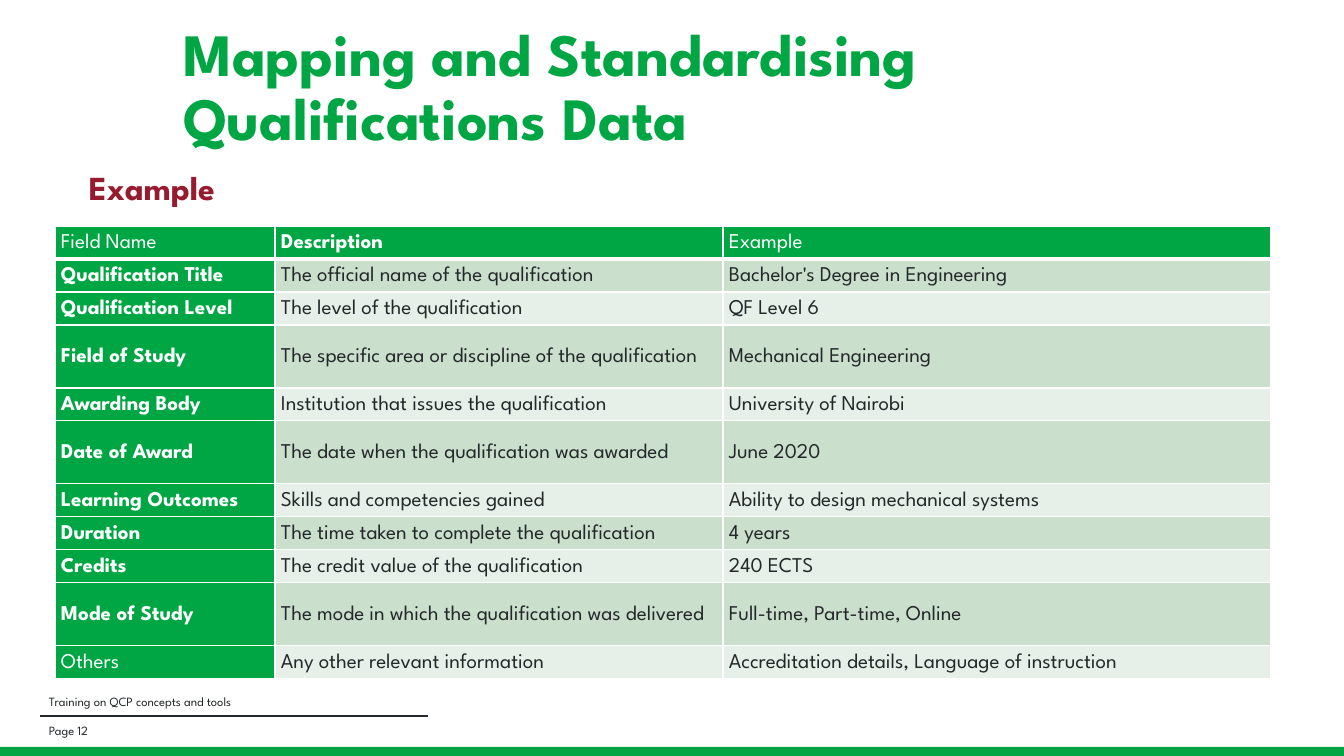
from lxml import etree
from pptx import Presentation
from pptx import util as u
from pptx.dml.color import RGBColor
from pptx.enum import shapes, text
from pptx.oxml.ns import qn

GREEN = RGBColor(0x00, 0xA6, 0x43)
DARK = RGBColor(0x24, 0x28, 0x2A)
RED = RGBColor(0x97, 0x1B, 0x2F)
WHITE = RGBColor(0xFF, 0xFF, 0xFF)
BANDS = [RGBColor(0xE6, 0xF0, 0xE8), RGBColor(0xCA, 0xE0, 0xCD)]

COLS = [220, 448, 548]
LOW, TALL = 33, 63
TALL_ROWS = {"Field of Study", "Date of Award", "Mode of Study"}
PLAIN = {"Field Name", "Example", "Others"}
ROWS = [
    ("Field Name", "Description", "Example"),
    ("Qualification Title", "The official name of the qualification",
     "Bachelor's Degree in Engineering"),
    ("Qualification Level", "The level of the qualification", "QF Level 6"),
    ("Field of Study", "The specific area or discipline of the qualification",
     "Mechanical Engineering"),
    ("Awarding Body", "Institution that issues the qualification",
     "University of Nairobi"),
    ("Date of Award", "The date when the qualification was awarded",
     "June 2020"),
    ("Learning Outcomes", "Skills and competencies gained",
     "Ability to design mechanical systems"),
    ("Duration", "The time taken to complete the qualification", "4 years"),
    ("Credits", "The credit value of the qualification", "240 ECTS"),
    ("Mode of Study", "The mode in which the qualification was delivered",
     "Full-time, Part-time, Online"),
    ("Others", "Any other relevant information",
     "Accreditation details, Language of instruction"),
]


def px(n):
    return u.Emu(round(n * 914400 / 100.8))


class Deck:
    """Holds the style and the current slide, and draws each kind of element."""

    font = "League Spartan"

    def __init__(self):
        self.prs = Presentation()
        self.prs.slide_width, self.prs.slide_height = px(1344), px(756)
        self.slide = self.prs.slides.add_slide(self.prs.slide_layouts[5])

    def style(self, par, size, color, bold=False, lead=1.0):
        par.alignment = text.PP_ALIGN.LEFT
        par.line_spacing = lead
        font = par.font
        font.name, font.size, font.bold = self.font, u.Pt(size), bold
        font.color.rgb = color

    def fill_text(self, shape, words, size, color, bold, lead, anchor):
        frame = shape.text_frame
        frame.text = words
        frame.word_wrap = True
        frame.auto_size = text.MSO_AUTO_SIZE.NONE
        frame.vertical_anchor = anchor
        self.style(frame.paragraphs[0], size, color, bold, lead)

    def title(self, words, x, y, w, h):
        box = self.slide.shapes.title
        box.left, box.top, box.width, box.height = map(px, (x, y, w, h))
        self.fill_text(box, words, 42.9, GREEN, True, 0.9,
                       text.MSO_ANCHOR.MIDDLE)

    def label(self, words, x, y, w, h, size, color, bold=False, lead=1.0,
              anchor=text.MSO_ANCHOR.MIDDLE):
        box = self.slide.shapes.add_textbox(*map(px, (x, y, w, h)))
        self.fill_text(box, words, size, color, bold, lead, anchor)

    def bar(self, x, y, w, h, color):
        bar = self.slide.shapes.add_shape(
            shapes.MSO_SHAPE.RECTANGLE, *map(px, (x, y, w, h)))
        bar.shadow.inherit = False
        bar.fill.solid()
        bar.fill.fore_color.rgb = color
        bar.line.fill.background()

    def rule(self, x, y, end, color, width):
        line = self.slide.shapes.add_connector(
            shapes.MSO_CONNECTOR.STRAIGHT, px(x), px(y), px(end), px(y))
        line.line.color.rgb = color
        line.line.width = u.Pt(width)
        etree.SubElement(line._element.spPr, qn("a:effectLst"))

    def edge(self, cell, side, width):
        props = cell._tc.get_or_add_tcPr()
        line = etree.SubElement(props, qn("a:ln" + side), w=str(u.Pt(width)))
        fill = etree.SubElement(line, qn("a:solidFill"))
        etree.SubElement(fill, qn("a:srgbClr"), val=str(WHITE))

    def cell(self, cell, words, row, col):
        head = row == 0 or col == 0
        cell.margin_left = px(6)
        cell.margin_right = cell.margin_top = cell.margin_bottom = px(1)
        cell.vertical_anchor = text.MSO_ANCHOR.MIDDLE
        thick = {"T": row == 1, "B": row == 0}
        for side in "LRTB":
            self.edge(cell, side, 3 if thick.get(side) else 1)
        cell.fill.solid()
        cell.fill.fore_color.rgb = GREEN if head else BANDS[row % 2]
        cell.text = words
        self.style(cell.text_frame.paragraphs[0], 15, WHITE if head else DARK,
                   head and words not in PLAIN, 1.07)

    def table(self, rows, x, y):
        highs = [TALL if row[0] in TALL_ROWS else LOW for row in rows]
        table = self.slide.shapes.add_table(
            len(rows), len(COLS), px(x), px(y),
            px(sum(COLS)), px(sum(highs))).table
        for col, wide in zip(table.columns, COLS):
            col.width = px(wide)
        for r, (row, high) in enumerate(zip(rows, highs)):
            table.rows[r].height = px(high)
            for c, words in enumerate(row):
                self.cell(table.cell(r, c), words, r, c)


def main():
    deck = Deck()
    deck.bar(-3, 747, 1350, 13, GREEN)
    deck.rule(40, 716, 428, DARK, 1.5)
    deck.table(ROWS, 55, 226)
    for words, y in (("Training on QCP concepts and tools", 692),
                     ("Page 12", 721)):
        deck.label(words, 39, y, 409, 19, 9, DARK)
    deck.label("Example", 79, 167, 1217, 47, 24, RED, True, 0.9,
               text.MSO_ANCHOR.TOP)
    deck.title("Mapping and Standardising Qualifications Data",
               173, 11, 1133, 156)
    deck.prs.save("out.pptx")


if __name__ == "__main__":
    main()
